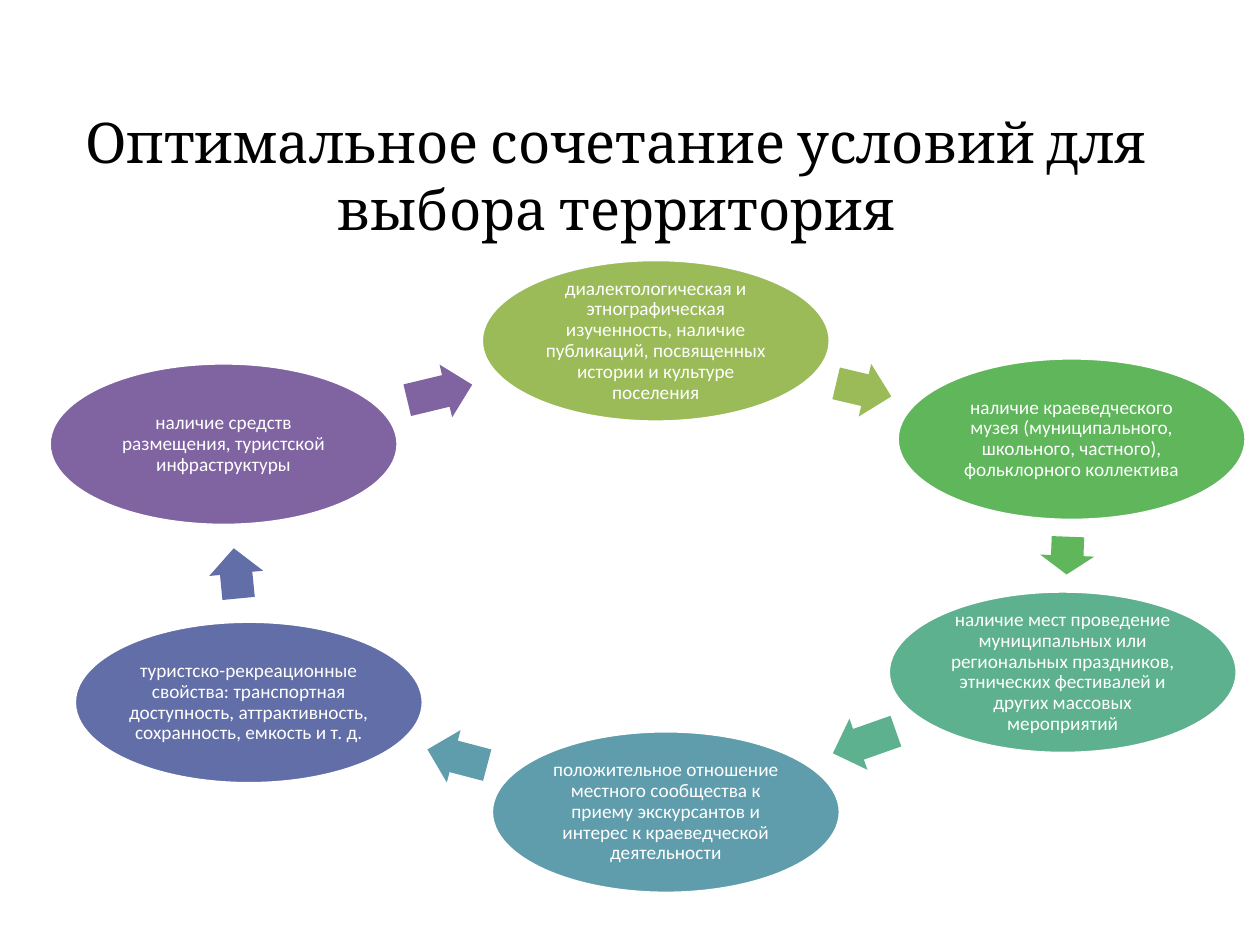
from math import atan2, degrees

from pptx import Presentation
from pptx.dml.color import RGBColor
from pptx.enum.shapes import MSO_SHAPE
from pptx.enum.text import MSO_ANCHOR, MSO_AUTO_SIZE, PP_ALIGN
from pptx.util import Inches, Pt

OVAL, ARROW = MSO_SHAPE.OVAL, MSO_SHAPE.RIGHT_ARROW
CENTER, TOP, MIDDLE = PP_ALIGN.CENTER, MSO_ANCHOR.TOP, MSO_ANCHOR.MIDDLE
TITLE_ONLY = 5

BLACK = RGBColor(0x00, 0x00, 0x00)
WHITE = RGBColor(0xFF, 0xFF, 0xFF)
OLIVE = RGBColor(0x9B, 0xBB, 0x59)
GREEN = RGBColor(0x5F, 0xB6, 0x5B)
MINT = RGBColor(0x5D, 0xB1, 0x8E)
TEAL = RGBColor(0x5F, 0x9D, 0xAC)
BLUE = RGBColor(0x62, 0x6E, 0xA7)
PURPLE = RGBColor(0x80, 0x64, 0xA2)

OVAL_W, OVAL_H = 2.77, 1.29
ARROW_H = 0.43

# Clockwise: oval left, oval top, length of the arrow to the next oval, colour, text
CONDITIONS = [
    (3.82, 2.06, 0.45, OLIVE, "диалектологическая и этнографическая изученность, наличие "
     "публикаций, посвященных истории и культуре поселения"),
    (7.12, 2.84, 0.30, GREEN, "наличие краеведческого музея (муниципального, школьного, "
     "частного), фольклорного коллектива"),
    (7.05, 4.69, 0.53, MINT, "наличие мест проведение муниципальных или региональных "
     "праздников, этнических фестивалей и других массовых мероприятий"),
    (3.90, 5.80, 0.49, TEAL, "положительное отношение местного сообщества к приему "
     "экскурсантов и интерес к краеведческой деятельности"),
    (0.59, 4.93, 0.40, BLUE, "туристско-рекреационные свойства: транспортная доступность, "
     "аттрактивность, сохранность, емкость и т. д."),
    (0.39, 2.88, 0.53, PURPLE, "наличие средств размещения, туристской инфраструктуры"),
]


def set_text(tf, text, font, size, color, anchor):
    tf.word_wrap = True
    tf.auto_size = MSO_AUTO_SIZE.NONE
    tf.vertical_anchor = anchor
    p = tf.paragraphs[0]
    p.text = text
    p.alignment = CENTER
    p.font.name, p.font.size, p.font.color.rgb = font, Pt(size), color
    return p


def add_title(s, text):
    title = s.shapes.title
    title.left, title.top = Inches(0.39), Inches(0.8)
    title.width, title.height = Inches(9), Inches(1.26)
    set_text(title.text_frame, text, "Cambria", 32, BLACK, TOP)


def add_filled(s, kind, left, top, width, height, color):
    sp = s.shapes.add_shape(kind, Inches(left), Inches(top), Inches(width), Inches(height))
    sp.shadow.inherit = False
    sp.fill.solid()
    sp.fill.fore_color.rgb = color
    return sp


def add_condition(s, left, top, color, text):
    sp = add_filled(s, OVAL, left, top, OVAL_W, OVAL_H, color)
    sp.line.color.rgb = WHITE
    sp.line.width = Pt(2)
    tf = sp.text_frame
    tf.margin_left = tf.margin_right = tf.margin_top = tf.margin_bottom = Inches(0.02)
    set_text(tf, text, "Calibri", 11, WHITE, MIDDLE).line_spacing = 0.9


def add_cycle_arrow(s, start, end, length, color):
    """Put an arrow halfway between two ovals, turned along the line of their centres."""
    (x1, y1), (x2, y2) = start, end
    mid_x, mid_y = (x1 + x2 + OVAL_W) / 2, (y1 + y2 + OVAL_H) / 2
    sp = add_filled(s, ARROW, mid_x - length / 2, mid_y - ARROW_H / 2,
                    length, ARROW_H, color)
    sp.line.fill.background()
    sp.adjustments[0], sp.adjustments[1] = 0.6, 0.5
    sp.rotation = degrees(atan2(y2 - y1, x2 - x1)) % 360


def main():
    prs = Presentation()
    prs.slide_width, prs.slide_height = Inches(10), Inches(7.5)
    s = prs.slides.add_slide(prs.slide_layouts[TITLE_ONLY])
    add_title(s, "Оптимальное сочетание условий для выбора территория")
    following = CONDITIONS[1:] + CONDITIONS[:1]
    for (left, top, length, color, text), after in zip(CONDITIONS, following):
        add_condition(s, left, top, color, text)
        add_cycle_arrow(s, (left, top), after[:2], length, color)
    prs.save("out.pptx")


if __name__ == "__main__":
    main()
